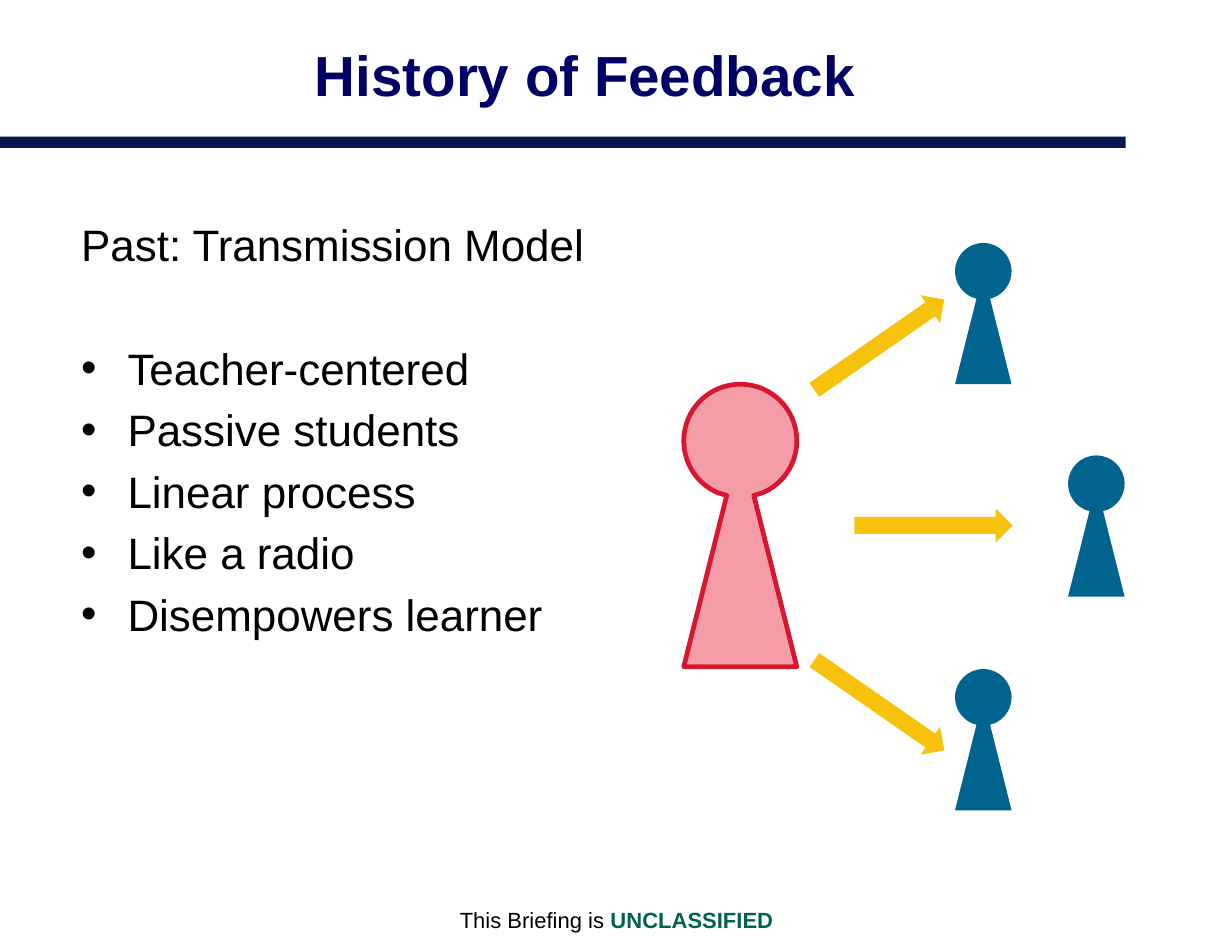
from dataclasses import dataclass

import pptx
import pptx.dml.color
import pptx.enum.shapes
import pptx.enum.text
import pptx.oxml
import pptx.oxml.ns
import pptx.util

Inches = pptx.util.Inches
Pt = pptx.util.Pt
SHAPES = pptx.enum.shapes.MSO_SHAPE
ALIGN = pptx.enum.text.PP_ALIGN

# Person outline, in thousandths of its width: each step ends at its last
# point, and a step of three points is a Bezier curve.
PERSON_START = (500, 0)
PERSON_STEPS = [
    [(776, 0), (1000, 224), (1000, 500)],
    [(1000, 707), (876, 885), (698, 961)],
    [(620, 985)],
    [(1000, 2500)],
    [(0, 2500)],
    [(380, 985)],
    [(302, 961)],
    [(124, 885), (0, 707), (0, 500)],
    [(0, 224), (224, 0), (500, 0)],
]


@dataclass(frozen=True)
class Theme:
    font: str = "Arial"
    title_size: int = 36
    body_size: int = 28
    footer_size: int = 14
    item_gap: float = 5.6
    heading_gap: float = 44.8
    title: str = "000066"
    text: str = "000000"
    bar: str = "091652"
    marking: str = "006351"
    teacher: str = "F49DA8"
    teacher_line: str = "D71730"
    student: str = "00648F"
    arrow: str = "F6C20B"


class SlideBuilder:
    def __init__(self, prs, theme):
        self.theme = theme
        self.s = prs.slides.add_slide(prs.slide_layouts[5])

    def run(self, p, text, size, color, bold=False):
        r = p.add_run()
        r.text = text
        r.font.name = self.theme.font
        r.font.size = Pt(size)
        r.font.bold = bold
        r.font.color.rgb = pptx.dml.color.RGBColor.from_string(color)

    def paint(self, sp, fill, line=None, width=3):
        sp.shadow.inherit = False
        sp.fill.solid()
        sp.fill.fore_color.rgb = pptx.dml.color.RGBColor.from_string(fill)
        if line:
            sp.line.color.rgb = pptx.dml.color.RGBColor.from_string(line)
            sp.line.width = Pt(width)
        else:
            sp.line.fill.background()

    def title(self, text, x, y, w, h):
        sp = self.s.shapes.title
        sp.left, sp.top, sp.width, sp.height = map(Inches, (x, y, w, h))
        tf = sp.text_frame
        tf.auto_size = pptx.enum.text.MSO_AUTO_SIZE.NONE
        tf.vertical_anchor = pptx.enum.text.MSO_ANCHOR.MIDDLE
        p = tf.paragraphs[0]
        p.alignment = ALIGN.CENTER
        self.run(p, text, self.theme.title_size, self.theme.title, bold=True)

    def text_box(self, x, y, w, h):
        sp = self.s.shapes.add_textbox(*map(Inches, (x, y, w, h)))
        sp.text_frame.word_wrap = True
        return sp.text_frame

    def bullet(self, p, indent):
        pPr = p._p.get_or_add_pPr()
        pPr.set("marL", str(Inches(indent)))
        pPr.set("indent", str(-Inches(indent)))
        ns = pptx.oxml.ns.nsdecls("a")
        pPr.append(pptx.oxml.parse_xml(f'<a:buFont {ns} typeface="{self.theme.font}"/>'))
        pPr.append(pptx.oxml.parse_xml(f'<a:buChar {ns} char="•"/>'))

    def bullet_list(self, heading, items, x, y, w, h):
        tf = self.text_box(x, y, w, h)
        size, color = self.theme.body_size, self.theme.text
        self.run(tf.paragraphs[0], heading, size, color)
        for i, item in enumerate(items):
            p = tf.add_paragraph()
            p.space_before = Pt(self.theme.item_gap if i else self.theme.heading_gap)
            self.bullet(p, 0.41)
            self.run(p, item, size, color)

    def footer(self, lead, marking, x, y, w, h):
        p = self.text_box(x, y, w, h).paragraphs[0]
        p.alignment = ALIGN.CENTER
        self.run(p, lead, self.theme.footer_size, self.theme.text)
        self.run(p, marking, self.theme.footer_size, self.theme.marking, bold=True)

    def shape(self, kind, fill, x, y, w, h, rotation=0):
        sp = self.s.shapes.add_shape(kind, *map(Inches, (x, y, w, h)))
        sp.rotation = rotation
        self.paint(sp, fill)

    def person(self, x, y, width, fill, line=None):
        """Draw a round head on a flared body, 2.5 times as tall as wide."""
        outline = self.s.shapes.build_freeform(*PERSON_START, scale=Inches(width) / 1000)
        outline.add_line_segments([step[-1] for step in PERSON_STEPS], close=True)
        sp = outline.convert_to_shape(Inches(x), Inches(y))
        ns = pptx.oxml.ns.nsdecls("a")
        segments = list(sp._element.iter(pptx.oxml.ns.qn("a:lnTo")))
        for segment, step in zip(segments, PERSON_STEPS):
            if len(step) == 3:
                points = "".join(f'<a:pt x="{px}" y="{py}"/>' for px, py in step)
                curve = pptx.oxml.parse_xml(f"<a:cubicBezTo {ns}>{points}</a:cubicBezTo>")
                segment.getparent().replace(segment, curve)
        self.paint(sp, fill, line)


def main():
    prs = pptx.Presentation()
    prs.slide_width, prs.slide_height = Inches(10.9), Inches(8.3)
    theme = Theme()
    slide = SlideBuilder(prs, theme)

    slide.shape(SHAPES.RECTANGLE, theme.bar, 0, 1.21, 9.96, 0.1)
    slide.footer("This Briefing is ", "UNCLASSIFIED", 2.75, 7.97, 5.41, 0.33)
    slide.title("History of Feedback", 1.13, 0, 8.09, 1.3)
    slide.bullet_list(
        "Past: Transmission Model",
        ["Teacher-centered", "Passive students", "Linear process",
         "Like a radio", "Disempowers learner"],
        0.62, 1.88, 9.65, 4.98)

    slide.person(6.05, 3.4, 1, theme.teacher, theme.teacher_line)
    for x, y in [(8.45, 2.15), (9.45, 4.03), (8.45, 5.92)]:
        slide.person(x, y, 0.5, theme.student)
    for x, y, rotation in [(7.56, 4.5, 0), (7.08, 2.9, -34.8), (7.08, 6.09, 34.8)]:
        slide.shape(SHAPES.RIGHT_ARROW, theme.arrow, x, y, 1.4, 0.3, rotation)

    prs.save("out.pptx")


if __name__ == "__main__":
    main()
